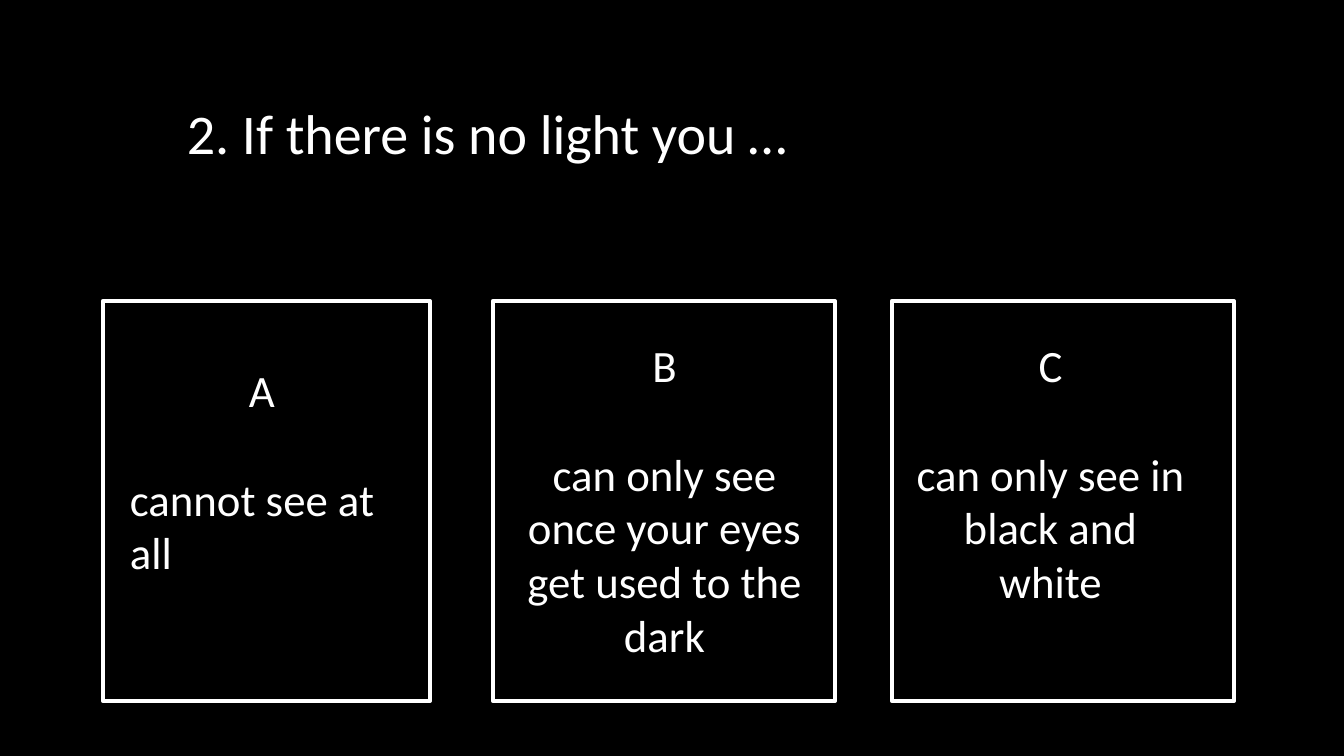
import pptx
import pptx.dml.color
import pptx.enum.shapes
import pptx.enum.text
import pptx.util

RGBColor = pptx.dml.color.RGBColor
ALIGN = pptx.enum.text.PP_ALIGN
BLACK = RGBColor(0, 0, 0)
WHITE = RGBColor(255, 255, 255)
WIDE, HIGH = 1344, 756
CARD_TOP, CARD_HIGH = 301, 400
GAP = 39  # points between a letter and its answer


def px(count):
    return pptx.util.Emu(round(count * 914400 / 100.8))


def put_text(slide, box, *lines, size=32, aligns=(ALIGN.LEFT,), gap=0):
    """Write one paragraph per line, with gap points before each but the first."""
    frame = slide.shapes.add_textbox(*map(px, box)).text_frame
    frame.word_wrap = True
    for index, (line, align) in enumerate(zip(lines, aligns)):
        para = frame.paragraphs[0] if index == 0 else frame.add_paragraph()
        para.alignment = align
        para.space_before = pptx.util.Pt(gap if index else 0)
        run = para.add_run()
        run.text = line
        run.font.name = "Calibri"
        run.font.size = pptx.util.Pt(size)
        run.font.color.rgb = WHITE


def add_card(slide, box, inset, letter, answer, align=ALIGN.CENTER):
    """Draw a framed answer; inset is the text's offset, width and height."""
    left, top = box[:2]
    frame = slide.shapes.add_shape(
        pptx.enum.shapes.MSO_SHAPE.RECTANGLE, *map(px, box))
    frame.shadow.inherit = False
    frame.fill.background()
    frame.line.color.rgb = WHITE
    frame.line.width = pptx.util.Pt(3)
    right, down, width, height = inset
    put_text(slide, (left + right, top + down, width, height), letter, answer,
             aligns=(ALIGN.CENTER, align), gap=GAP)


def add_quiz(slide, box):
    left, top, width, height = box
    fill = slide.background.fill
    fill.solid()
    fill.fore_color.rgb = BLACK
    put_text(slide, (left + 177, top + 94, width - 321, 78),
             "2. If there is no light you …", size=40)
    cards = [
        (103, 327, (17, 57, 284, 233), "A", "cannot see at all", ALIGN.LEFT),
        (493, 342, (9, 32, 325, 336), "B",
         "can only see once your eyes get used to the dark", ALIGN.CENTER),
        (892, 342, (9, 32, 299, 281), "C",
         "can only see in black and white", ALIGN.CENTER),
    ]
    for start, wide, *parts in cards:
        add_card(slide, (left + start, top + CARD_TOP, wide, CARD_HIGH), *parts)


def main():
    deck = pptx.Presentation()
    deck.slide_width, deck.slide_height = px(WIDE), px(HIGH)
    slide = deck.slides.add_slide(deck.slide_layouts[6])
    add_quiz(slide, (0, 0, WIDE, HIGH))
    deck.save("out.pptx")


if __name__ == "__main__":
    main()
